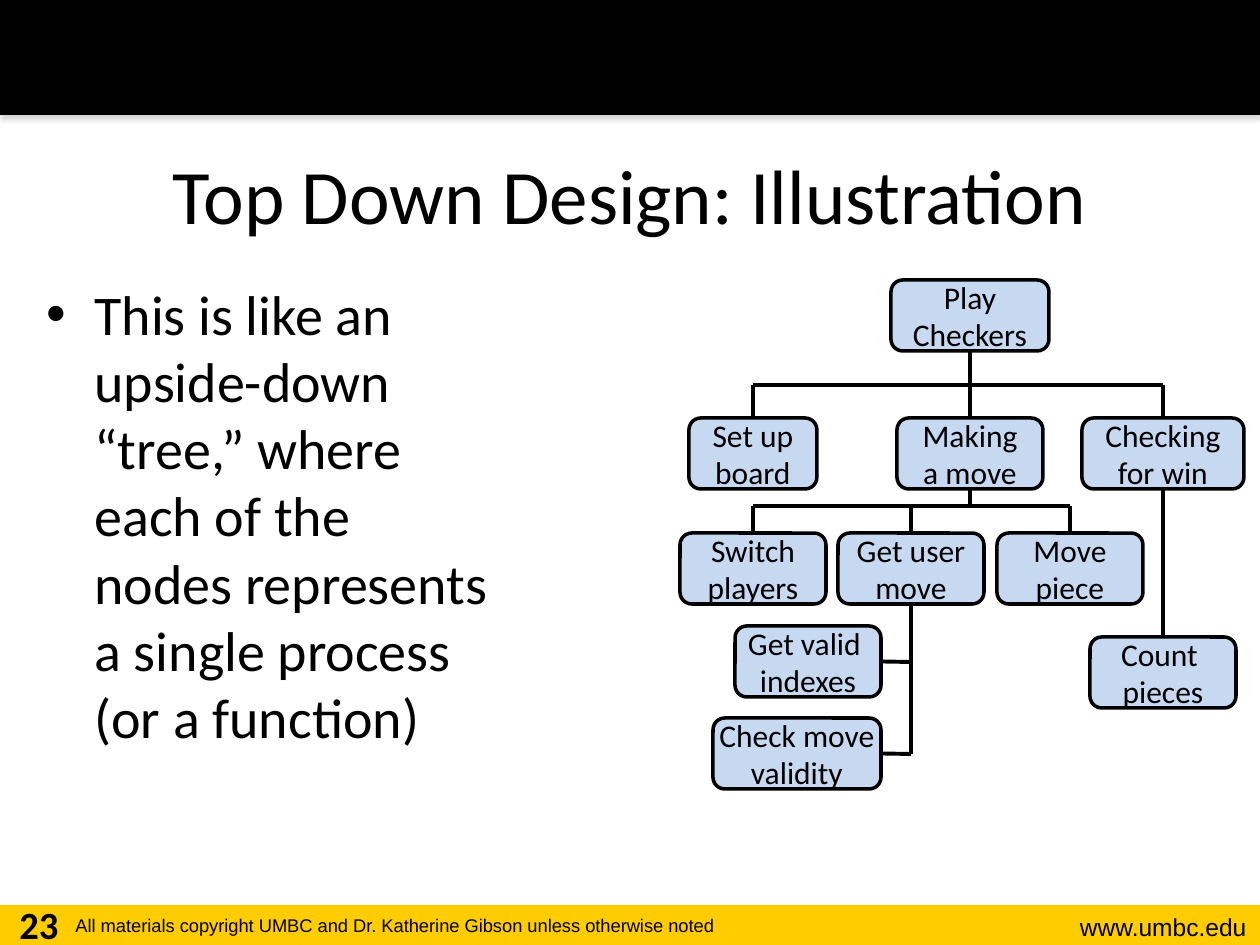
from lxml import etree
from pptx import Presentation
from pptx.dml.color import RGBColor
from pptx.enum.shapes import MSO_CONNECTOR, MSO_SHAPE
from pptx.enum.text import MSO_ANCHOR, PP_ALIGN
from pptx.oxml.ns import qn
from pptx.util import Emu, Inches, Pt

LEFT, CENTER, RIGHT = PP_ALIGN.LEFT, PP_ALIGN.CENTER, PP_ALIGN.RIGHT
TOP, MIDDLE = MSO_ANCHOR.TOP, MSO_ANCHOR.MIDDLE
RECTANGLE, ROUNDED = MSO_SHAPE.RECTANGLE, MSO_SHAPE.ROUNDED_RECTANGLE
STRAIGHT = MSO_CONNECTOR.STRAIGHT
SIDE_TOP, SIDE_BOTTOM, SIDE_RIGHT = 0, 2, 3

BLACK, GOLD, PALE_BLUE, GRAY = "000000", "FFCC00", "C6D9F1", "808080"
NODE_HEIGHT = 71


def px(length):
    return Emu(round(length * 914400 / 126))


def color(hex_string):
    return RGBColor.from_string(hex_string)


class SlideBuilder:
    def __init__(self, slide, font="Calibri"):
        self.slide = slide
        self.shapes = slide.shapes
        self.font = font

    def fill_text(self, shape, text, size, align=LEFT, anchor=TOP, wrap=True,
                  font=None, bold=False):
        frame = shape.text_frame
        frame.word_wrap = wrap
        frame.vertical_anchor = anchor
        paragraph = frame.paragraphs[0]
        paragraph.alignment = align
        for index, line in enumerate(text.split("\n")):
            if index:
                paragraph.add_line_break()
            run = paragraph.add_run()
            run.text = line
            run.font.name = font or self.font
            run.font.size = Pt(size)
            run.font.bold = bold
            run.font.color.rgb = color(BLACK)
        return paragraph

    def title(self, left, top, width, height, text, size):
        shape = self.shapes.title
        shape.left, shape.top = px(left), px(top)
        shape.width, shape.height = px(width), px(height)
        self.fill_text(shape, text, size, CENTER, MIDDLE)

    def text(self, left, top, width, height, text, size, **style):
        box = self.shapes.add_textbox(px(left), px(top), px(width), px(height))
        return self.fill_text(box, text, size, **style)

    def bullet(self, left, top, width, height, text, size, indent):
        paragraph = self.text(left, top, width, height, text, size)
        properties = paragraph._p.get_or_add_pPr()
        properties.set("marL", str(px(indent)))
        properties.set("indent", str(-px(indent)))
        etree.SubElement(properties, qn("a:buFont"), typeface="Arial")
        etree.SubElement(properties, qn("a:buChar"), char="•")

    def box(self, kind, left, top, width, height, fill):
        shape = self.shapes.add_shape(kind, px(left), px(top), px(width), px(height))
        shape.shadow.inherit = False
        shape.fill.solid()
        shape.fill.fore_color.rgb = color(fill)
        shape.line.fill.background()
        return shape

    def drop_shadow(self, shape):
        effects = shape._element.spPr.find(qn("a:effectLst"))
        shadow = etree.SubElement(effects, qn("a:outerShdw"), blurRad=str(Pt(3.1)),
                                  dist=str(Pt(1.8)), dir="5400000", rotWithShape="0")
        tint = etree.SubElement(shadow, qn("a:srgbClr"), val=GRAY)
        etree.SubElement(tint, qn("a:alpha"), val="35000")

    def node(self, center, top, width, text):
        shape = self.box(ROUNDED, center - width // 2, top, width, NODE_HEIGHT, PALE_BLUE)
        shape.line.color.rgb = color(BLACK)
        shape.line.width = Pt(2)
        self.fill_text(shape, text, 18, CENTER, MIDDLE, wrap="\n" not in text)
        return shape

    def line(self, start, end):
        """Each end is an (x, y) point or a (shape, side) pair."""
        connector = self.shapes.add_connector(STRAIGHT, 0, 0, 0, 0)
        if isinstance(start[0], int):
            connector.begin_x, connector.begin_y = px(start[0]), px(start[1])
        else:
            connector.begin_connect(*start)
        if isinstance(end[0], int):
            connector.end_x, connector.end_y = px(end[0]), px(end[1])
        else:
            connector.end_connect(*end)
        connector.line.color.rgb = color(BLACK)
        connector.line.width = Pt(2.25)
        etree.SubElement(connector._element.spPr, qn("a:effectLst"))


def main():
    presentation = Presentation()
    presentation.slide_width, presentation.slide_height = Inches(10), Inches(7.5)
    slide = presentation.slides.add_slide(presentation.slide_layouts[5])
    builder = SlideBuilder(slide)

    # Header and footer bands
    builder.box(RECTANGLE, 0, 905, 1260, 40, GOLD)
    header = builder.box(RECTANGLE, 0, 0, 1260, 115, BLACK)
    builder.drop_shadow(header)
    builder.text(1008, 906, 251, 43, "www.umbc.edu", 14, align=RIGHT, font="Arial")
    builder.text(63, 908, 827, 37, "All materials copyright UMBC and Dr. Katherine Gibson "
                 "unless otherwise noted", 10.5, font="Arial")
    builder.text(0, 895, 78, 50, "23", 22, align=CENTER, bold=True)

    # Title and bullet
    builder.title(63, 115, 1134, 157, "Top Down Design: Illustration", 44)
    builder.bullet(34, 273, 546, 573,
                   "This is like an upside-down \n“tree,” where \neach of the \n"
                   "nodes represents \na single process \n(or a function)", 32, 48)

    # Tree nodes: centre, top, width, text
    play = builder.node(970, 280, 158, "Play Checkers")
    set_up = builder.node(753, 418, 128, "Set up board")
    making = builder.node(970, 418, 146, "Making a move")
    checking = builder.node(1163, 418, 162, "Checking for win")
    switch = builder.node(753, 533, 146, "Switch players")
    user_move = builder.node(911, 533, 146, "Get user move")
    move_piece = builder.node(1070, 533, 146, "Move piece")
    count = builder.node(1163, 637, 146, "Count \npieces")
    indexes = builder.node(808, 626, 146, "Get valid \nindexes")
    validity = builder.node(797, 718, 168, "Check move\nvalidity")

    # Branches from the root
    builder.line((play, SIDE_BOTTOM), (making, SIDE_TOP))
    builder.line((1163, 385), (753, 385))
    for center, child in ((753, set_up), (1163, checking)):
        builder.line((center, 385), (child, SIDE_TOP))

    # Branches below the second level
    builder.line((making, SIDE_BOTTOM), (970, 506))
    builder.line((1070, 506), (753, 506))
    for center, child in ((753, switch), (911, user_move), (1070, move_piece)):
        builder.line((child, SIDE_TOP), (center, 506))
    builder.line((checking, SIDE_BOTTOM), (count, SIDE_TOP))

    # Side branches of the user's move
    builder.line((user_move, SIDE_BOTTOM), (911, 754))
    for child, middle in ((indexes, 662), (validity, 754)):
        builder.line((child, SIDE_RIGHT), (911, middle))

    presentation.save("out.pptx")


if __name__ == "__main__":
    main()
